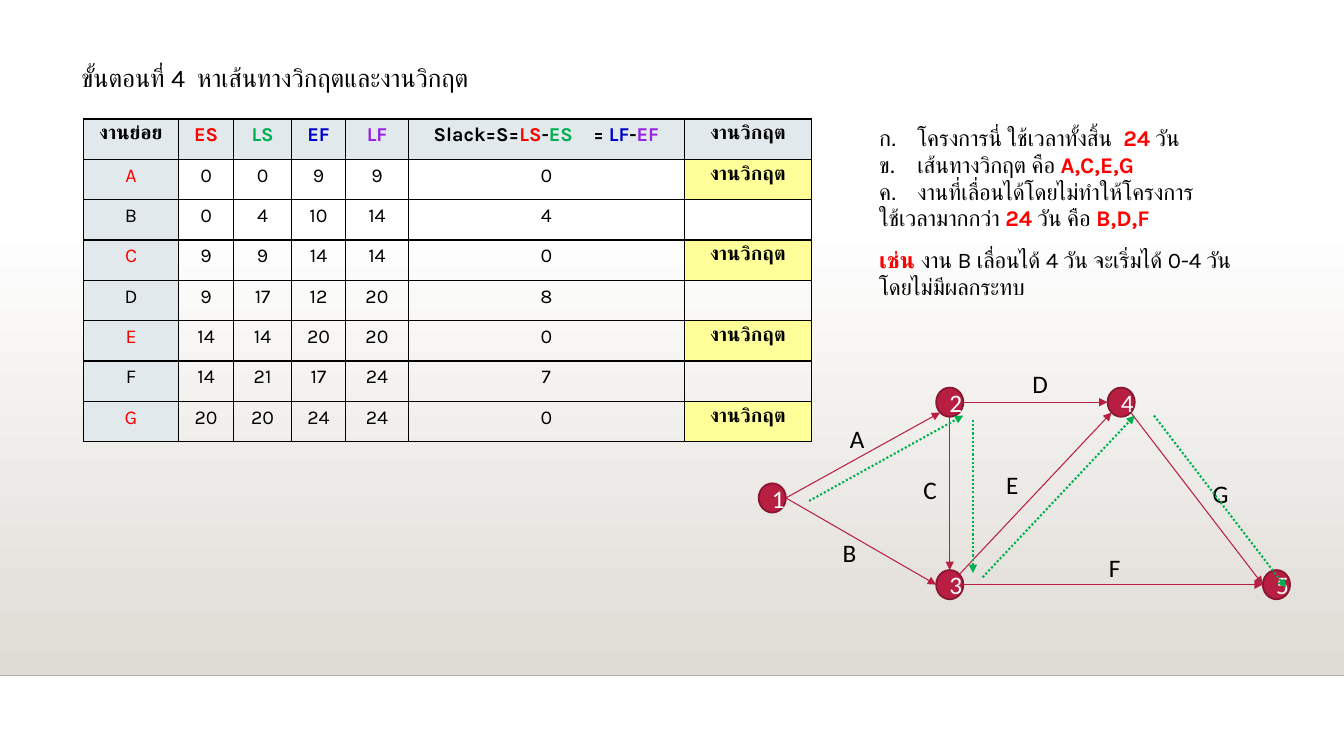
import math

import pptx
import pptx.dml.color
import pptx.enum.dml
import pptx.enum.shapes
import pptx.enum.text
import pptx.oxml.xmlchemy
import pptx.util

Inches, Pt = pptx.util.Inches, pptx.util.Pt
SHAPE = pptx.enum.shapes.MSO_SHAPE
CENTER = pptx.enum.text.PP_ALIGN.CENTER
BLACK, RED, GREEN, BLUE, PURPLE = "000000", "FF0000", "00B050", "0000CC", "9622E7"
CRIMSON, HEADER_FILL, CRITICAL_FILL = "B71E42", "E1E9EC", "FFFF99"
CRITICAL = "งานวิกฤต"


def rgb(value):
    return pptx.dml.color.RGBColor.from_string(value)


def sub(parent, tag, **attributes):
    element = pptx.oxml.xmlchemy.OxmlElement(tag)
    for name, value in attributes.items():
        element.set(name, value)
    parent.append(element)
    return element


def add_run(paragraph, text, size, color=BLACK, bold=False, font="Karla"):
    run = paragraph.add_run()
    run.text = text
    run.font.size, run.font.name, run.font.bold = Pt(size), font, bold
    run.font.color.rgb = rgb(color)
    return run


def add_text(slide, box, paragraphs, size, font="Karla", numbered=0):
    """Each paragraph is a list of (text, color, bold); the first `numbered` get Thai letters."""
    frame = slide.shapes.add_textbox(*map(Inches, box)).text_frame
    frame.word_wrap = False
    frame.auto_size = pptx.enum.text.MSO_AUTO_SIZE.SHAPE_TO_FIT_TEXT
    for index, runs in enumerate(paragraphs):
        paragraph = frame.paragraphs[0] if index == 0 else frame.add_paragraph()
        if index < numbered:
            properties = paragraph._p.get_or_add_pPr()
            properties.set("marL", str(Inches(0.38)))
            properties.set("indent", str(Inches(-0.38)))
            sub(properties, "a:buFont", typeface="+mj-lt")
            sub(properties, "a:buAutoNum", type="thaiAlphaPeriod")
        for text, color, bold in runs:
            add_run(paragraph, text, size, color, bold, font)


def add_line(slide, start, end, color, width, dotted=False, arrow=True):
    line = slide.shapes.add_connector(
        pptx.enum.shapes.MSO_CONNECTOR.STRAIGHT, *map(Inches, (*start, *end)))
    line.line.color.rgb = rgb(color)
    line.line.width = Pt(width)
    if dotted:
        line.line.dash_style = pptx.enum.dml.MSO_LINE.ROUND_DOT
    if arrow:
        sub(line.line._get_or_add_ln(), "a:tailEnd", type="triangle")
    sub(line._element.spPr, "a:effectLst")


def add_backdrop(slide, box):
    left, top, width, height = box
    backdrop = slide.shapes.add_shape(SHAPE.RECTANGLE, *map(Inches, box))
    backdrop.shadow.inherit = False
    backdrop.line.fill.background()
    backdrop.fill.gradient()
    backdrop.fill.gradient_angle = 270
    for stop, color, position in zip(backdrop.fill.gradient_stops, ("FFFFFF", "DFDBD5"), (0, 1)):
        stop.color.rgb = rgb(color)
        stop.position = position
    bottom = top + height
    add_line(slide, (left, bottom), (left + width, bottom), "B2AFAA", 1, arrow=False)


def fill_cell(cell, runs, fill=None):
    if fill:
        cell.fill.solid()
        cell.fill.fore_color.rgb = rgb(fill)
    else:
        cell.fill.background()
    paragraph = cell.text_frame.paragraphs[0]
    paragraph.alignment = CENTER
    for text, color, bold in runs:
        run = add_run(paragraph, text, 14, color, bold)
        if text == " ":  # wide gap between the two slack formulas
            run.font._element.set("spc", "1100")
    # Borders go ahead of the fill
    properties = cell._tc.get_or_add_tcPr()
    for index, side in enumerate(("a:lnL", "a:lnR", "a:lnT", "a:lnB")):
        border = sub(properties, side, w=str(Pt(1)))
        sub(sub(border, "a:solidFill"), "a:srgbClr", val=BLACK)
        properties.insert(index, border)


def add_task_table(slide, box):
    widths = (0.94, 0.55, 0.57, 0.54, 0.62, 2.74, 1.26)
    header = [[("งานย่อย", BLACK)], [("ES", RED)], [("LS", GREEN)], [("EF", BLUE)], [("LF", PURPLE)],
              [("Slack=S=", BLACK), ("LS", RED), ("-", BLACK), ("ES", GREEN), (" ", BLACK),
               ("= ", BLACK), ("LF", BLUE), ("-", BLACK), ("EF", PURPLE)],
              [(CRITICAL, BLACK)]]
    # Task, ES, LS, EF, LF
    tasks = [("A", 0, 0, 9, 9), ("B", 0, 4, 10, 14), ("C", 9, 9, 14, 14), ("D", 9, 17, 12, 20),
             ("E", 14, 14, 20, 20), ("F", 14, 21, 17, 24), ("G", 20, 20, 24, 24)]
    table = slide.shapes.add_table(len(tasks) + 1, len(widths), *map(Inches, box)).table
    table.first_row = table.horz_banding = False
    for column, width in zip(table.columns, widths):
        column.width = Inches(width)
    for row in table.rows:
        row.height = Inches(box[3] / len(table.rows))
    for column, runs in enumerate(header):
        fill_cell(table.cell(0, column), [(*run, True) for run in runs], HEADER_FILL)
    for row, (task, es, ls, ef, lf) in enumerate(tasks, 1):
        slack = ls - es
        critical = slack == 0
        fill_cell(table.cell(row, 0), [(task, RED if critical else BLACK, False)], HEADER_FILL)
        for column, value in enumerate((es, ls, ef, lf, slack), 1):
            fill_cell(table.cell(row, column), [(str(value), BLACK, False)])
        fill_cell(table.cell(row, 6), [(CRITICAL, BLACK, True)] if critical else [],
                  CRITICAL_FILL if critical else None)


def add_findings(slide, box):
    left, top, width, height = box
    add_text(slide, (left, top, width, 1.21), [
        [("โครงการนี่ ใช้เวลาทั้งสิ้น  ", BLACK, False), ("24", RED, True), (" วัน", BLACK, False)],
        [("เส้นทางวิกฤต คือ ", BLACK, False), ("A,C,E,G", RED, True)],
        [("งานที่เลื่อนได้โดยไม่ทำให้โครงการ", BLACK, False)],
        [("ใช้เวลามากกว่า ", BLACK, False), ("24", RED, True), (" วัน คือ ", BLACK, False),
         ("B,D,F", RED, True)],
    ], 16, numbered=3)
    add_text(slide, (left, top + 1.21, 4.17, height - 1.21), [
        [("เช่น ", RED, True), ("งาน B เลื่อนได้ 4 วัน จะเริ่มได้ 0-4 วัน", BLACK, False)],
        [("โดยไม่มีผลกระทบ", BLACK, False)],
    ], 16)


def add_network(slide, box):
    left, top = box[:2]
    node_width, node_height = 0.27, 0.29
    centers = {1: (0.14, 1.33), 2: (1.9, 0.38), 3: (1.9, 2.19), 4: (3.6, 0.38), 5: (5.14, 2.19)}
    # Task: from node, angle it leaves at, to node, angle it arrives at, label position
    edges = {"A": (1, 0, 2, 135, (0.81, 0.54)), "B": (1, 0, 3, 180, (0.74, 1.67)),
             "C": (2, 90, 3, 270, (1.54, 1.05)), "D": (2, 0, 4, 180, (2.62, 0)),
             "E": (3, 315, 4, 135, (2.36, 1)), "F": (3, 0, 5, 180, (3.38, 1.82)),
             "G": (4, 45, 5, 180, (4.41, 1.09))}

    def rim(node, degrees, shift=(0, 0)):
        x, y = centers[node]
        angle = math.radians(degrees)
        return (left + x + node_width / 2 * math.cos(angle) + shift[0],
                top + y + node_height / 2 * math.sin(angle) + shift[1])

    # Events
    for number, (x, y) in centers.items():
        event = slide.shapes.add_shape(SHAPE.OVAL, *map(Inches, (
            left + x - node_width / 2, top + y - node_height / 2, node_width, node_height)))
        event.shadow.inherit = False
        event.fill.solid()
        event.fill.fore_color.rgb = rgb(CRIMSON)
        event.line.color.rgb = rgb("871631")
        event.line.width = Pt(1.25)
        paragraph = event.text_frame.paragraphs[0]
        paragraph.alignment = CENTER
        add_run(paragraph, str(number), 18, "FFFFFF", font="Calibri")
    # Tasks
    for task, (start, leave, end, arrive, (x, y)) in edges.items():
        add_line(slide, rim(start, leave), rim(end, arrive), CRIMSON, 0.75)
        add_text(slide, (left + x, top + y, 0.24, 0.27), [[(task, BLACK, False)]], 18, "Calibri")
    # Critical path, beside its tasks
    beside = (0.23, 0.03)
    for task in "ACEG":
        start, leave, end, arrive, _ = edges[task]
        add_line(slide, rim(start, leave, beside), rim(end, arrive, beside), GREEN, 1.5, dotted=True)


def main():
    deck = pptx.Presentation()
    deck.slide_width, deck.slide_height = Inches(13.33), Inches(7.5)
    slide = deck.slides.add_slide(deck.slide_layouts[6])
    add_backdrop(slide, (0, 2.21, 13.33, 4.49))
    add_text(slide, (0.71, 0.57, 4.61, 0.4),
             [[("ขั้นตอนที่ 4  หาเส้นทางวิกฤตและงานวิกฤต", BLACK, False)]], 18)
    add_task_table(slide, (0.83, 1.18, 7.22, 3.2))
    add_findings(slide, (8.62, 1.18, 3.78, 1.85))
    add_network(slide, (7.52, 3.61, 5.27, 2.33))
    deck.save("out.pptx")


if __name__ == "__main__":
    main()
